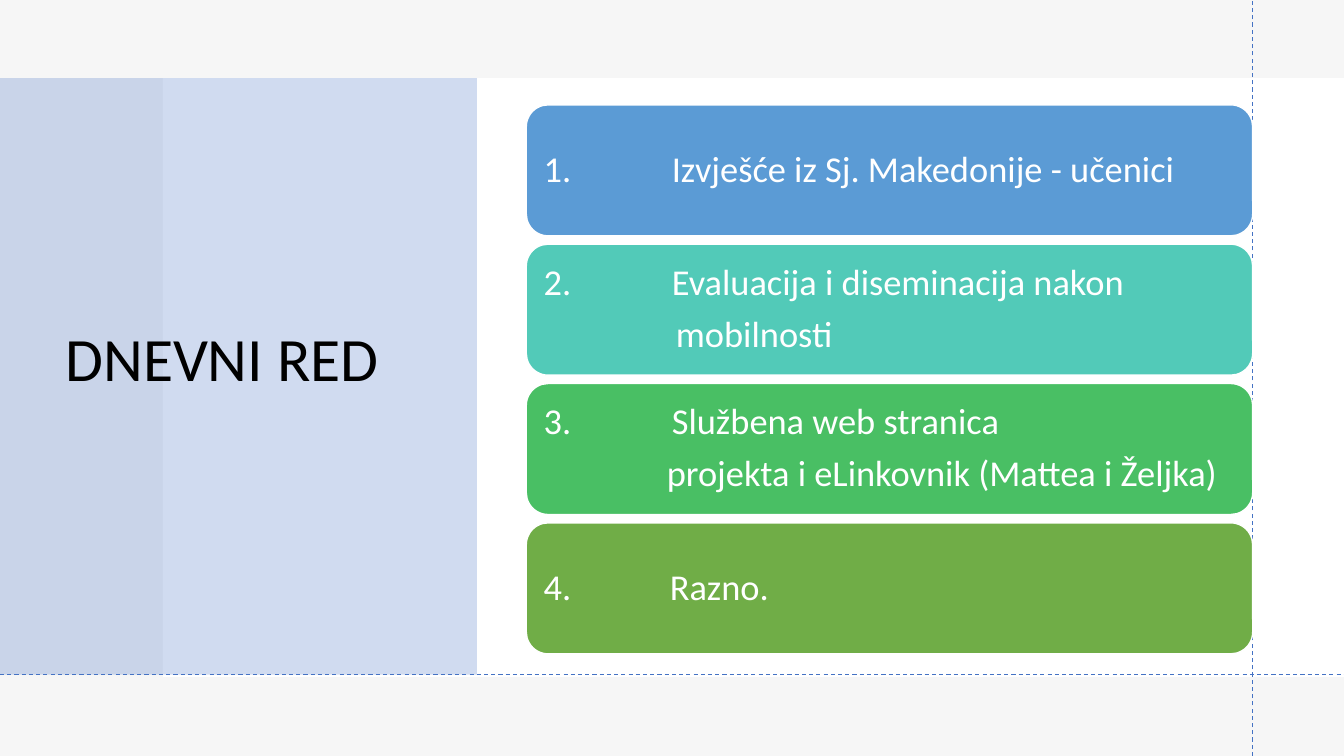
import pptx
import pptx.util
import pptx.dml.color
import pptx.enum.dml
import pptx.enum.shapes
import pptx.enum.text
import pptx.oxml.ns
import lxml.etree

RGBColor = pptx.dml.color.RGBColor
MSO_SHAPE = pptx.enum.shapes.MSO_SHAPE
qn = pptx.oxml.ns.qn

WHITE = RGBColor(0xFF, 0xFF, 0xFF)
BLACK = RGBColor(0x00, 0x00, 0x00)
GRAY = RGBColor(0xE7, 0xE6, 0xE6)
PALE_GRAY = RGBColor(0xF6, 0xF6, 0xF6)
BLUE = RGBColor(0x44, 0x72, 0xC4)
SKY = RGBColor(0x5B, 0x9B, 0xD5)
TEAL = RGBColor(0x52, 0xCA, 0xB8)
GREEN = RGBColor(0x49, 0xBF, 0x64)
OLIVE = RGBColor(0x70, 0xAD, 0x47)

FONT = "Calibri"
WIDTH = pptx.util.Inches(13.33)
HEIGHT = pptx.util.Inches(7.5)

AGENDA_TOP = 13.87
AGENDA_PITCH = 18.43
AGENDA = [
    (SKY, [("1.\tIzvješće iz Sj. Makedonije - učenici", 1.27)]),
    (TEAL, [("2.\tEvaluacija i diseminacija nakon", 1.27), ("mobilnosti", 1.31)]),
    (GREEN, [("3.\tSlužbena web stranica", 1.27),
             ("projekta i eLinkovnik (Mattea i Željka)", 1.22)]),
    (OLIVE, [("4.\tRazno.", 1.25)]),
]


def across(percent):
    return round(WIDTH * percent / 100)


def down(percent):
    return round(HEIGHT * percent / 100)


def area(left, top, width, height):
    return across(left), down(top), across(width), down(height)


def add_block(slide, kind, place, color, opacity=100):
    block = slide.shapes.add_shape(kind, *area(*place))
    block.shadow.inherit = False
    block.fill.solid()
    block.fill.fore_color.rgb = color
    block.line.fill.background()
    if opacity < 100:
        tint = block.fill._xPr.find(qn("a:solidFill"))[0]
        lxml.etree.SubElement(tint, qn("a:alpha"), val=str(opacity * 1000))
    return block


def add_guide(slide, x1, y1, x2, y2):
    guide = slide.shapes.add_connector(
        pptx.enum.shapes.MSO_CONNECTOR.STRAIGHT,
        across(x1), down(y1), across(x2), down(y2))
    guide.line.color.rgb = BLUE
    guide.line.width = pptx.util.Pt(0.75)
    guide.line.dash_style = pptx.enum.dml.MSO_LINE.DASH
    lxml.etree.SubElement(guide._element.spPr, qn("a:effectLst"))


def style_paragraph(paragraph, text, size, color):
    paragraph.text = text
    paragraph.alignment = pptx.enum.text.PP_ALIGN.LEFT
    paragraph.line_spacing = 0.9
    paragraph.font.name = FONT
    paragraph.font.size = pptx.util.Pt(size)
    paragraph.font.color.rgb = color


def add_title(slide, text):
    frame = slide.shapes.add_textbox(*area(4.13, 9.87, 29.63, 75.87)).text_frame
    frame.word_wrap = True
    frame.vertical_anchor = pptx.enum.text.MSO_ANCHOR.MIDDLE
    style_paragraph(frame.paragraphs[0], text, 44, BLACK)


def add_agenda_item(slide, row, color, lines):
    place = (39.16, AGENDA_TOP + row * AGENDA_PITCH, 54.05, 17.33)
    item = add_block(slide, MSO_SHAPE.ROUNDED_RECTANGLE, place, color)
    item.line.color.rgb = WHITE
    item.line.width = pptx.util.Pt(1)
    frame = item.text_frame
    frame.word_wrap = True
    frame.vertical_anchor = pptx.enum.text.MSO_ANCHOR.MIDDLE
    frame.margin_left = frame.margin_right = pptx.util.Inches(0.11)
    for number, (text, indent) in enumerate(lines):
        paragraph = frame.add_paragraph() if number else frame.paragraphs[0]
        style_paragraph(paragraph, text, 26, WHITE)
        paragraph.space_after = pptx.util.Pt(9)
        hanging = pptx.util.Inches(indent)
        properties = paragraph._p.get_or_add_pPr()
        properties.set("marL", str(hanging))
        properties.set("indent", str(-hanging if "\t" in text else 0))


def main():
    deck = pptx.Presentation()
    deck.slide_width, deck.slide_height = WIDTH, HEIGHT
    slide = deck.slides.add_slide(deck.slide_layouts[6])
    slide.background.fill.solid()
    slide.background.fill.fore_color.rgb = PALE_GRAY

    for place, color, opacity in [
        ((0, 0, 100, 100), WHITE, 100),
        ((0, 0, 100, 100), GRAY, 35),
        ((12.12, 10.35, 87.88, 79.2), WHITE, 100),
        ((0, 10.35, 35.48, 78.9), BLUE, 25),
    ]:
        add_block(slide, MSO_SHAPE.RECTANGLE, place, color, opacity)

    add_title(slide, "DNEVNI RED")
    add_guide(slide, 93.2, 100, 93.2, 0)
    add_guide(slide, 0, 89.2, 100, 89.2)
    for row, (color, lines) in enumerate(AGENDA):
        add_agenda_item(slide, row, color, lines)

    deck.save("out.pptx")


if __name__ == "__main__":
    main()
